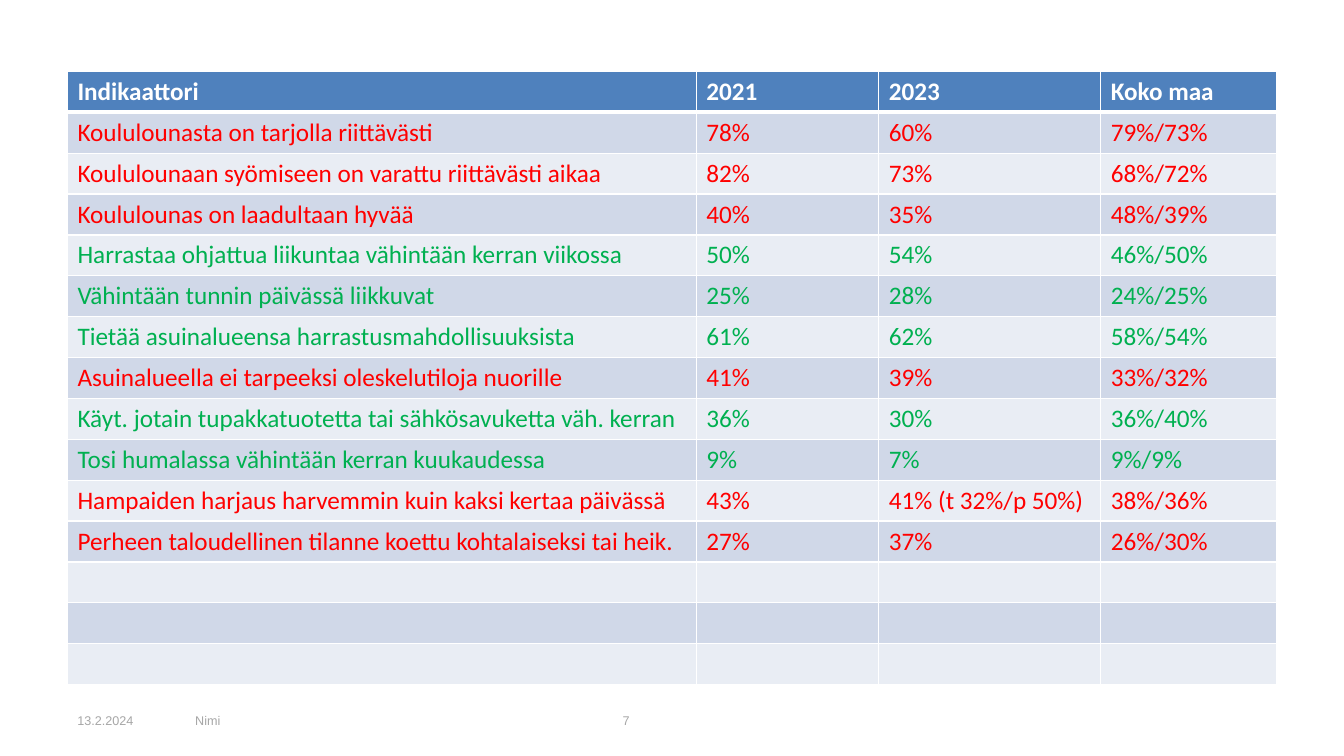
from lxml.etree import SubElement
from pptx import Presentation
from pptx.dml.color import RGBColor
from pptx.enum.text import MSO_ANCHOR
from pptx.oxml.ns import qn
from pptx.util import Cm, Pt

COLORS = {
    "white": "FFFFFF",
    "header": "4F81BD",
    "odd_row": "D0D8E8",
    "even_row": "E9EDF4",
    "worse": "FF0000",
    "better": "00B050",
    "footer": "A6A6A6",
}
LEFT = 1.7
ROW_HEIGHT = 1.03
COLUMN_WIDTHS = [15.85, 4.6, 5.59, 4.44]
EMPTY_ROWS = 3

HEADER = ["Indikaattori", "2021", "2023", "Koko maa"]
INDICATORS = [
    ("worse", "Koululounasta on tarjolla riittävästi", "78%", "60%", "79%/73%"),
    ("worse", "Koululounaan syömiseen on varattu riittävästi aikaa", "82%", "73%", "68%/72%"),
    ("worse", "Koululounas on laadultaan hyvää", "40%", "35%", "48%/39%"),
    ("better", "Harrastaa ohjattua liikuntaa vähintään kerran viikossa", "50%", "54%", "46%/50%"),
    ("better", "Vähintään tunnin päivässä liikkuvat", "25%", "28%", "24%/25%"),
    ("better", "Tietää asuinalueensa harrastusmahdollisuuksista", "61%", "62%", "58%/54%"),
    ("worse", "Asuinalueella ei tarpeeksi oleskelutiloja nuorille", "41%", "39%", "33%/32%"),
    ("better", "Käyt. jotain tupakkatuotetta tai sähkösavuketta väh. kerran", "36%", "30%", "36%/40%"),
    ("better", "Tosi humalassa vähintään kerran kuukaudessa", "9%", "7%", "9%/9%"),
    ("worse", "Hampaiden harjaus harvemmin kuin kaksi kertaa päivässä", "43%", "41% (t 32%/p 50%)", "38%/36%"),
    ("worse", "Perheen taloudellinen tilanne koettu kohtalaiseksi tai heik.", "27%", "37%", "26%/30%"),
]
FOOTERS = [("13.2.2024", LEFT, 2.97), ("Nimi", 4.67, 10.72), ("7", 15.44, 7.9)]


def color(name):
    return RGBColor.from_string(COLORS[name])


def format_text(paragraph, font_name, size, color_name, bold=False):
    for run in paragraph.runs:
        run.font.name = font_name
        run.font.size = Pt(size)
        run.font.bold = bold
        run.font.color.rgb = color(color_name)


def add_borders(cell, top=1, bottom=1):
    """Draw white cell borders; call before the fill, which must follow them in the XML."""
    properties = cell._tc.get_or_add_tcPr()
    for side, width in (("L", 1), ("R", 1), ("T", top), ("B", bottom)):
        line = SubElement(properties, qn(f"a:ln{side}"), w=str(Pt(width)))
        fill = SubElement(line, qn("a:solidFill"))
        SubElement(fill, qn("a:srgbClr"), val=COLORS["white"])


def fill_row(cells, texts, fill_name, text_color, bold=False, top=1, bottom=1):
    for cell, text in zip(cells, texts):
        add_borders(cell, top, bottom)
        cell.fill.solid()
        cell.fill.fore_color.rgb = color(fill_name)
        cell.text_frame.text = text
        format_text(cell.text_frame.paragraphs[0], "Calibri", 18, text_color, bold)


def add_indicator_table(slide):
    body = INDICATORS + [("worse", "", "", "", "")] * EMPTY_ROWS
    row_count = len(body) + 1
    table = slide.shapes.add_table(
        row_count, len(HEADER), Cm(LEFT), Cm(1.8),
        Cm(sum(COLUMN_WIDTHS)), Cm(ROW_HEIGHT * row_count)).table
    for column, width in zip(table.columns, COLUMN_WIDTHS):
        column.width = Cm(width)
    for row in table.rows:
        row.height = Cm(ROW_HEIGHT)
    fill_row(table.rows[0].cells, HEADER, "header", "white", bold=True, bottom=3)
    for number, (trend, *texts) in enumerate(body, start=1):
        band = "odd_row" if number % 2 else "even_row"
        fill_row(table.rows[number].cells, texts, band, trend, top=3 if number == 1 else 1)


def add_footer(slide, text, left, width):
    shape = slide.shapes.add_textbox(Cm(left), Cm(17.65), Cm(width), Cm(1.01))
    text_frame = shape.text_frame
    text_frame.word_wrap = True
    text_frame.vertical_anchor = MSO_ANCHOR.MIDDLE
    text_frame.text = text
    format_text(text_frame.paragraphs[0], "Arial", 9, "footer")


def main():
    presentation = Presentation()
    presentation.slide_width = Cm(33.87)
    presentation.slide_height = Cm(19.05)
    slide = presentation.slides.add_slide(presentation.slide_layouts[6])
    add_indicator_table(slide)
    for text, left, width in FOOTERS:
        add_footer(slide, text, left, width)
    presentation.save("out.pptx")


if __name__ == "__main__":
    main()
